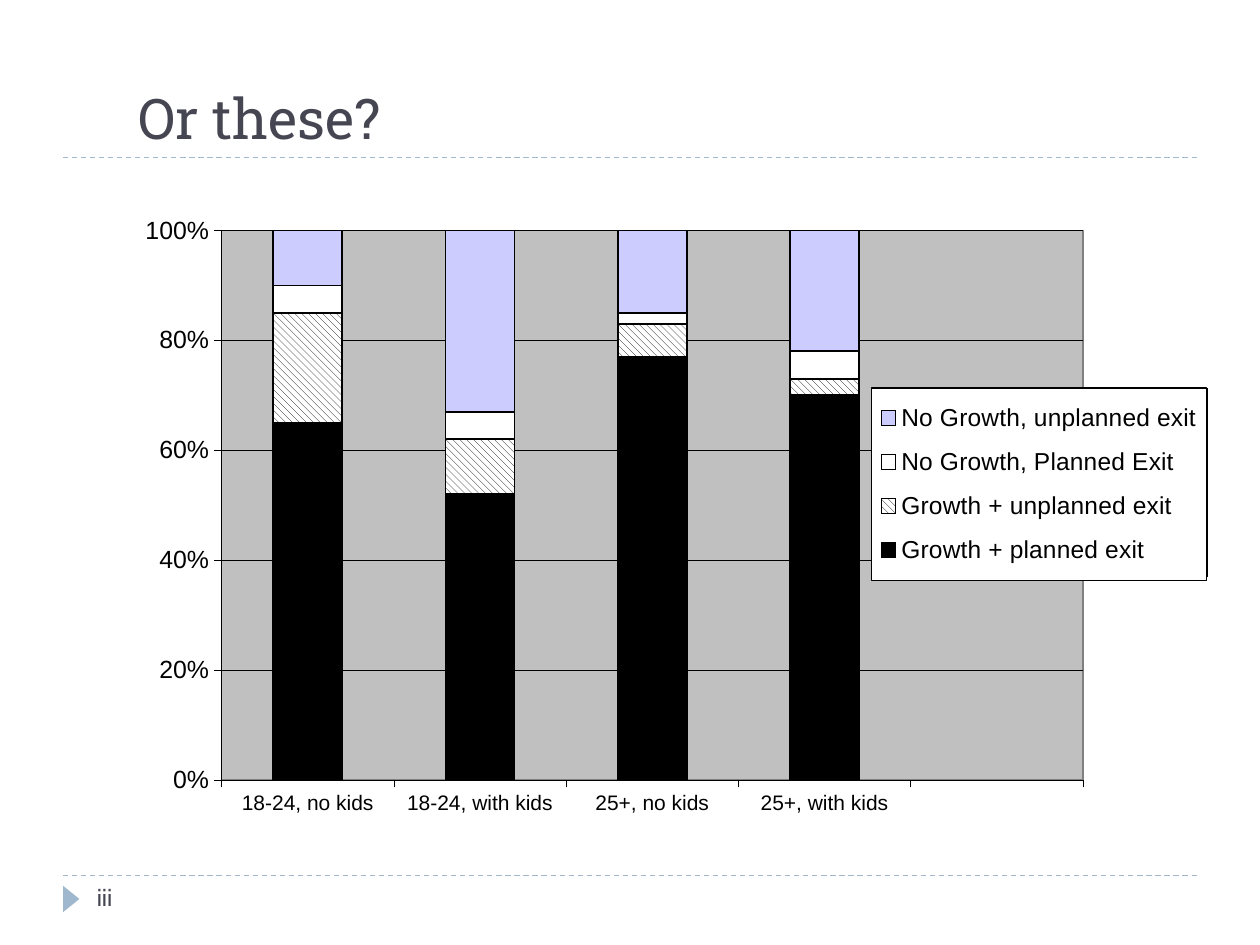
"""Build a slide with a 100% stacked column chart of growth and exit by age and family."""
import pptx
import pptx.chart.data
import pptx.dml.color
import pptx.enum.chart
import pptx.enum.dml
import pptx.enum.shapes
import pptx.enum.text
import pptx.oxml
import pptx.oxml.ns
import pptx.util

Inches = pptx.util.Inches
Pt = pptx.util.Pt

THEME = {
    "ink": "464653", "accent": "9FB8CD", "black": "000000", "white": "FFFFFF",
    "plot": "C0C0C0", "plot_edge": "808080", "lilac": "CCCCFF",
    "title_font": "Roboto Slab", "body_font": "Cabin", "chart_font": "Arial",
    "title_size": 32, "number_size": 14, "value_size": 14.2, "legend_size": 14, "category_size": 12,
}
TITLE = "Or these?"
PAGE_NUMBER = "iii"
CATEGORIES = ["18-24, no kids", "18-24, with kids", "25+, no kids", "25+, with kids", ""]
SERIES = [
    ("Growth + planned exit", (65, 52, 77, 70, None), "black"),
    ("Growth + unplanned exit", (20, 10, 6, 3, None), "hatch"),
    ("No Growth, Planned Exit", (5, 5, 2, 5, None), "white"),
    ("No Growth, unplanned exit", (10, 33, 15, 22, None), "lilac"),
]
RULES = [
    ((0.5, 6.95, 9.5, 6.95), "accent", True),
    ((0.5, 1.25, 9.5, 1.25), "accent", True),
    ((9.58, 3.08, 9.58, 4.58), "black", False),
]
TITLE_BOX = (1, 0.33, 8.5, 0.92)
CHART_BOX = (0, 1.33, 9.58, 5.58)
PLOT_BOX = (1.76, 1.83, 6.84, 4.36)
LEGEND_BOX = (6.92, 3.08, 2.66, 1.53)
MARKER_BOX = (0.46, 7.07, 0.21, 0.13)
NUMBER_BOX = (0.67, 6.95, 2.17, 0.4)


def color(name):
    return pptx.dml.color.RGBColor.from_string(THEME[name])


def set_all(target, formats):
    for name, value in formats.items():
        setattr(target, name, value)


def set_font(font, family, size, ink):
    set_all(font, {"name": THEME[family], "size": Pt(THEME[size]), "bold": False})
    font.color.rgb = color(ink)


def set_fill(fill, name):
    fill.solid()
    fill.fore_color.rgb = color(name)


def set_line(line, name, width):
    line.color.rgb = color(name)
    line.width = Pt(width)


def write(frame, text, family, size, anchor):
    set_all(frame, {"text": text, "word_wrap": True, "vertical_anchor": anchor,
                    "auto_size": pptx.enum.text.MSO_AUTO_SIZE.NONE})
    paragraph = frame.paragraphs[0]
    paragraph.alignment = pptx.enum.text.PP_ALIGN.LEFT
    set_font(paragraph.runs[0].font, family, size, "ink")


def chart_layout(box, target=""):
    left, top, width, height = CHART_BOX
    shares = ((box[0] - left) / width, (box[1] - top) / height, box[2] / width, box[3] / height)
    places = "".join(f'<c:{tag} val="{share:.4f}"/>' for tag, share in zip("xywh", shares))
    return pptx.oxml.parse_xml(
        f'<c:layout {pptx.oxml.ns.nsdecls("c")}><c:manualLayout>{target}'
        f'<c:xMode val="edge"/><c:yMode val="edge"/>{places}</c:manualLayout></c:layout>')


def chart_area(fill, edge=None):
    def paint(name):
        return f'<a:solidFill><a:srgbClr val="{THEME[name]}"/></a:solidFill>'
    outline = f'<a:ln w="{Pt(0.75)}">{paint(edge)}</a:ln>' if edge else "<a:ln><a:noFill/></a:ln>"
    return pptx.oxml.parse_xml(
        f'<c:spPr {pptx.oxml.ns.nsdecls("c", "a")}>{paint(fill)}{outline}</c:spPr>')


def format_areas(chart):
    root = chart.element
    for old in root.xpath(".//c:plotArea/c:layout | .//c:legend/c:layout"):
        old.getparent().remove(old)
    root.xpath(".//c:barChart")[0].addprevious(
        chart_layout(PLOT_BOX, '<c:layoutTarget val="inner"/>'))
    root.xpath(".//c:legend/c:legendPos")[0].addnext(chart_layout(LEGEND_BOX))
    for anchor, fill, edge in [(".//c:valAx", "plot", "plot_edge"),
                               (".//c:legend/c:overlay", "white", "black"),
                               ("./c:chart", "white", None)]:
        root.xpath(anchor)[0].addnext(chart_area(fill, edge))


def add_chart(slide):
    data = pptx.chart.data.CategoryChartData()
    data.categories = CATEGORIES
    for name, values, _ in SERIES:
        data.add_series(name, values)
    kinds = pptx.enum.chart
    chart = slide.shapes.add_chart(
        kinds.XL_CHART_TYPE.COLUMN_STACKED_100, *map(Inches, CHART_BOX), data).chart
    set_all(chart, {"has_title": False, "has_legend": True})
    set_font(chart.font, "chart_font", "value_size", "black")
    set_all(chart.legend, {"position": kinds.XL_LEGEND_POSITION.RIGHT, "include_in_layout": False})
    set_font(chart.legend.font, "chart_font", "legend_size", "black")
    set_all(chart.plots[0], {"overlap": 100, "gap_width": 150, "vary_by_categories": False})

    for series, (_, _, paint) in zip(chart.plots[0].series, SERIES):
        fill = series.format.fill
        if paint == "hatch":
            fill.patterned()
            fill.pattern = pptx.enum.dml.MSO_PATTERN.WIDE_DOWNWARD_DIAGONAL
            fill.fore_color.rgb = color("black")
            fill.back_color.rgb = color("white")
        else:
            set_fill(fill, paint)
        set_line(series.format.line, "black", 1)

    for axis, size in [(chart.category_axis, "category_size"), (chart.value_axis, "value_size")]:
        axis.major_tick_mark = kinds.XL_TICK_MARK.OUTSIDE
        set_font(axis.tick_labels.font, "chart_font", size, "black")
        set_line(axis.format.line, "black", 0.25)
    chart.category_axis.tick_label_position = kinds.XL_TICK_LABEL_POSITION.LOW
    set_all(chart.value_axis, {"minimum_scale": 0, "maximum_scale": 1, "major_unit": 0.2,
                               "has_major_gridlines": True})
    set_all(chart.value_axis.tick_labels, {"number_format": "0%", "number_format_is_linked": False})
    set_line(chart.value_axis.major_gridlines.format.line, "black", 0.25)
    format_areas(chart)


def add_rule(slide, ends, ink, dashed):
    rule = slide.shapes.add_connector(
        pptx.enum.shapes.MSO_CONNECTOR.STRAIGHT, *map(Inches, ends))
    set_line(rule.line, ink, 0.75)
    if dashed:
        rule.line.dash_style = pptx.enum.dml.MSO_LINE.DASH
    rule.element.spPr.append(pptx.oxml.parse_xml(f'<a:effectLst {pptx.oxml.ns.nsdecls("a")}/>'))


def main():
    presentation = pptx.Presentation()
    set_all(presentation, {"slide_width": Inches(10), "slide_height": Inches(7.5)})
    slide = presentation.slides.add_slide(presentation.slide_layouts[5])
    set_fill(slide.background.fill, "white")

    title = slide.shapes.title
    set_all(title, dict(zip(("left", "top", "width", "height"), map(Inches, TITLE_BOX))))
    write(title.text_frame, TITLE, "title_font", "title_size", pptx.enum.text.MSO_ANCHOR.BOTTOM)

    marker = slide.shapes.add_shape(
        pptx.enum.shapes.MSO_SHAPE.ISOSCELES_TRIANGLE, *map(Inches, MARKER_BOX))
    marker.rotation = 90
    marker.shadow.inherit = False
    set_fill(marker.fill, "accent")
    marker.line.fill.background()

    add_chart(slide)
    for rule in RULES:
        add_rule(slide, *rule)
    number = slide.shapes.add_textbox(*map(Inches, NUMBER_BOX))
    write(number.text_frame, PAGE_NUMBER, "body_font", "number_size", pptx.enum.text.MSO_ANCHOR.TOP)
    presentation.save("out.pptx")


if __name__ == "__main__":
    main()
